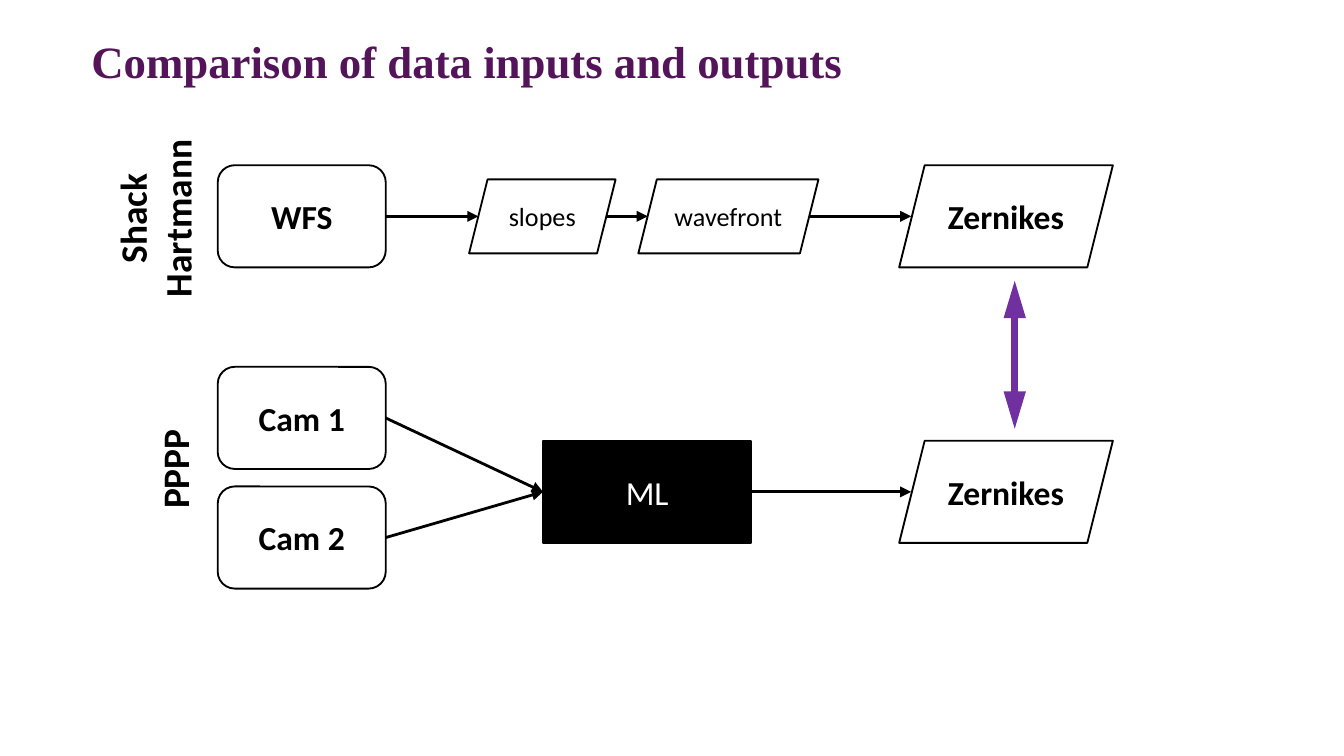
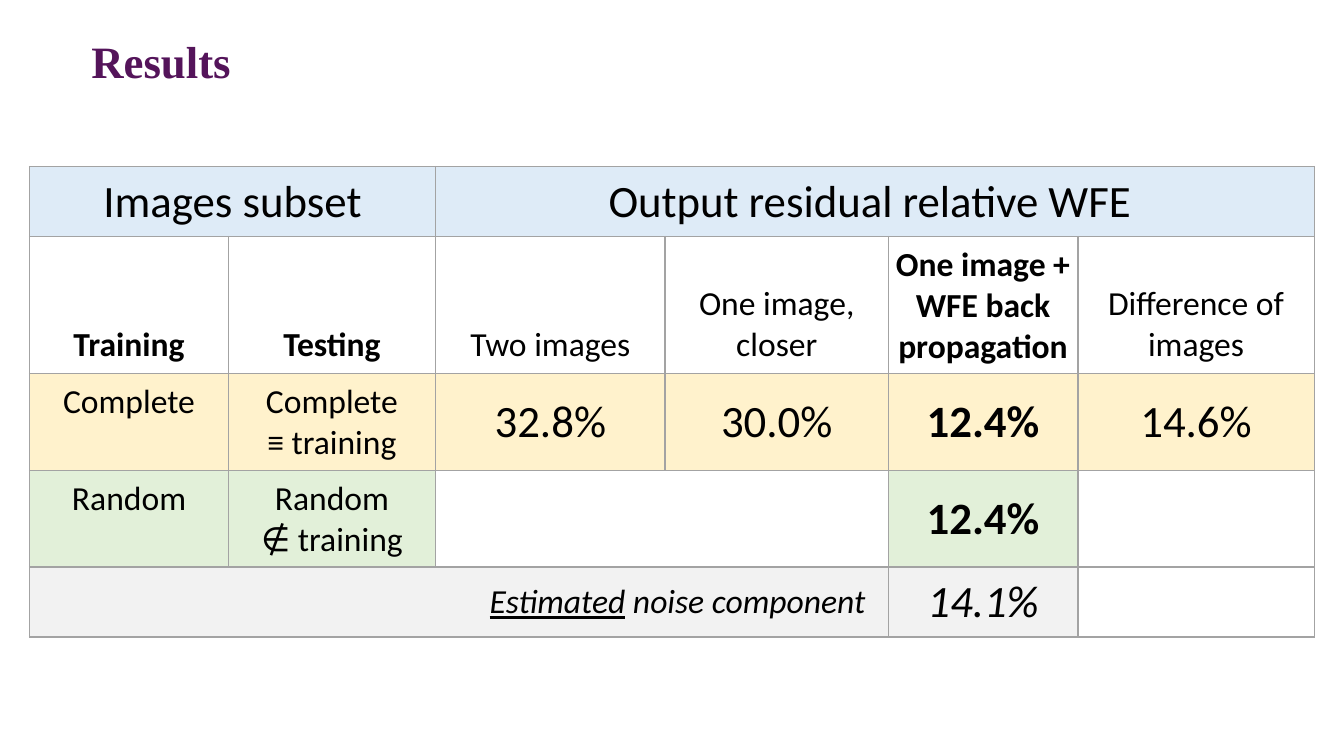
from lxml import etree
from pptx import Presentation
from pptx.dml.color import RGBColor
from pptx.enum.shapes import MSO_CONNECTOR, MSO_SHAPE
from pptx.enum.text import MSO_ANCHOR, PP_ALIGN
from pptx.oxml import parse_xml
from pptx.oxml.ns import nsdecls, qn
from pptx.util import Inches, Pt

BLACK = RGBColor(0x00, 0x00, 0x00)
WHITE = RGBColor(0xFF, 0xFF, 0xFF)
PLUM = RGBColor(0x54, 0x14, 0x5A)
PURPLE = RGBColor(0x70, 0x30, 0xA0)
BORDER = RGBColor(0xA3, 0xA3, 0xA3)
BLUE = RGBColor(0xDE, 0xEB, 0xF7)
YELLOW = RGBColor(0xFF, 0xF2, 0xCC)
GREEN = RGBColor(0xE2, 0xF0, 0xD9)
GREY = RGBColor(0xF2, 0xF2, 0xF2)


def write(tf, text, size, bold=False, color=BLACK, align=PP_ALIGN.CENTER, name="Calibri"):
    """Fill a text frame, one paragraph per item of text."""
    for i, line in enumerate(text):
        p = tf.add_paragraph() if i else tf.paragraphs[0]
        p.text = line
        p.alignment = align
        p.font.name, p.font.size, p.font.bold = name, Pt(size), bold
        p.font.color.rgb = color


def arrow(s, x1, y1, x2, y2, color=BLACK, width=1.5, ends=("tailEnd",), length="med"):
    c = s.shapes.add_connector(MSO_CONNECTOR.STRAIGHT, *map(Inches, (x1, y1, x2, y2)))
    c.line.color.rgb, c.line.width = color, Pt(width)
    for end in ends:
        etree.SubElement(c.line._get_or_add_ln(), qn("a:" + end), type="triangle", len=length)
    etree.SubElement(c._element.spPr, qn("a:effectLst"))


# Widescreen, 16:9
prs = Presentation()
prs.slide_width = Inches(10)
prs.slide_height = prs.slide_width * 9 // 16

# Slides with the shared title style
slides = []
for title in ("Comparison of data inputs and outputs", "Results"):
    s = prs.slides.add_slide(prs.slide_layouts[6])
    tf = s.shapes.add_textbox(Inches(0.68), Inches(0.3), Inches(8.64), Inches(0.94)).text_frame
    tf.word_wrap = True
    tf.margin_left = tf.margin_right = tf.margin_top = tf.margin_bottom = 0
    write(tf, [title], 24, True, PLUM, PP_ALIGN.LEFT, "Times New Roman")
    tf.paragraphs[0].line_spacing = 0.9
    slides.append(s)
flow, results = slides

# Flow chart grid: column edges and row centres
SENSOR_X, SENSOR_W = 1.62, 1.25
SENSOR_END = SENSOR_X + SENSOR_W
ML_X, ML_W = 4.04, 1.55
OUT_X, OUT_W, OUT_IN = 6.69, 1.59, 6.78
BOX_H, STEP_H = 0.76, 0.55
SH_Y, CAM1_Y, ML_Y, CAM2_Y = 1.61, 3.11, 3.66, 4.0

# Boxes, each centred on its row
ROUND, SLANT = MSO_SHAPE.ROUNDED_RECTANGLE, MSO_SHAPE.PARALLELOGRAM
for text, kind, x, y, w, h, size, bold, fill, color in (
    ("WFS", ROUND, SENSOR_X, SH_Y, SENSOR_W, BOX_H, 18, True, WHITE, BLACK),
    ("slopes", SLANT, 3.49, SH_Y, 1.09, STEP_H, 14, False, WHITE, BLACK),
    ("wavefront", SLANT, 4.75, SH_Y, 1.34, STEP_H, 14, False, WHITE, BLACK),
    ("Zernikes", SLANT, OUT_X, SH_Y, OUT_W, BOX_H, 18, True, WHITE, BLACK),
    ("Cam 1", ROUND, SENSOR_X, CAM1_Y, SENSOR_W, BOX_H, 18, True, WHITE, BLACK),
    ("Cam 2", ROUND, SENSOR_X, CAM2_Y, SENSOR_W, BOX_H, 18, True, WHITE, BLACK),
    ("ML", MSO_SHAPE.FLOWCHART_PROCESS, ML_X, ML_Y, ML_W, BOX_H, 18, False, BLACK, WHITE),
    ("Zernikes", SLANT, OUT_X, ML_Y, OUT_W, BOX_H, 18, True, WHITE, BLACK),
):
    sp = flow.shapes.add_shape(kind, Inches(x), Inches(y - h / 2), Inches(w), Inches(h))
    sp.shadow.inherit = False
    sp.fill.solid()
    sp.fill.fore_color.rgb = fill
    sp.line.color.rgb, sp.line.width = BLACK, Pt(1)
    sp.text_frame.vertical_anchor = MSO_ANCHOR.MIDDLE
    write(sp.text_frame, [text], size, bold, color)

# Arrows
for x1, x2 in ((SENSOR_END, 3.56), (4.52, 4.82), (6.02, OUT_IN)):
    arrow(flow, x1, SH_Y, x2, SH_Y)
for cam_y in (CAM1_Y, CAM2_Y):
    arrow(flow, SENSOR_END, cam_y, ML_X, ML_Y)
arrow(flow, ML_X + ML_W, ML_Y, OUT_IN, ML_Y)
arrow(flow, 7.55, 2.09, 7.55, 3.19, PURPLE, 4, ("headEnd", "tailEnd"), "lg")

# Rotated row labels
for lines, x, y, w, h in ((["Shack", "Hartmann"], 0.46, 1.24, 1.38, 0.77),
                          (["PPPP"], 0.9, 3.27, 0.8, 0.44)):
    sp = flow.shapes.add_textbox(Inches(x), Inches(y), Inches(w), Inches(h))
    sp.rotation = 270
    sp.text_frame.word_wrap = False
    write(sp.text_frame, lines, 20, True)

# Results table: (text, size, bold, anchor, fill) per cell
TOP, MID, LOW = MSO_ANCHOR.TOP, MSO_ANCHOR.MIDDLE, MSO_ANCHOR.BOTTOM
EMPTY = ("", 18, False, TOP, None)
rows = (
    [("Images subset", 24, False, TOP, BLUE), ("", 24, False, TOP, BLUE),
     ("Output residual relative WFE ", 24, False, TOP, BLUE)]
    + [("", 24, False, TOP, BLUE)] * 3,
    [(text, 18, bold, LOW, None) for text, bold in (
        ("Training", True), ("Testing", True), ("Two images", False),
        ("One image,\vcloser", False), ("One image + WFE back propagation", True),
        ("Difference of images", False))],
    [(text, 18, False, TOP, YELLOW) for text in ("Complete", "Complete\v≡ training")]
    + [(text, 24, text == "12.4%", MID, YELLOW)
       for text in ("32.8%", "30.0%", "12.4%", "14.6%")],
    [(text, 18, False, TOP, GREEN) for text in ("Random", "Random\v∉ training")]
    + [EMPTY, EMPTY, ("12.4%", 24, True, MID, GREEN), EMPTY],
    [("", 18, False, MID, GREY)] * 4 + [("14.1%", 24, False, TOP, GREY), EMPTY],
)
widths = (1.48, 1.54, 1.71, 1.66, 1.41, 1.76)
heights = (0.52, 1.02, 0.72, 0.72, 0.52)
table = results.shapes.add_table(len(rows), len(widths), Inches(0.22), Inches(1.24),
                                 Inches(sum(widths)), Inches(sum(heights))).table
table.first_row = table.horz_banding = False
for col, w in zip(table.columns, widths):
    col.width = Inches(w)
for row, h in zip(table.rows, heights):
    row.height = Inches(h)

for r, row in enumerate(rows):
    for c, (text, size, bold, anchor, fill) in enumerate(row):
        cell = table.cell(r, c)
        cell.margin_left = cell.margin_right = Inches(0.05)
        cell.margin_top = cell.margin_bottom = Inches(0.06)
        cell.vertical_anchor = anchor
        write(cell.text_frame, [text], size, bold)
        if fill is None:
            cell.fill.background()
        else:
            cell.fill.solid()
            cell.fill.fore_color.rgb = fill
        for i, side in enumerate(("lnL", "lnR", "lnT", "lnB")):
            cell._tc.get_or_add_tcPr().insert(i, parse_xml(
                f'<a:{side} {nsdecls("a")} w="{Pt(1)}"><a:solidFill>'
                f'<a:srgbClr val="{BORDER}"/></a:solidFill></a:{side}>'))

# Merged cells
for r, first, last in ((0, 0, 1), (0, 2, 5), (3, 2, 3), (4, 0, 3)):
    table.cell(r, first).merge(table.cell(r, last))

# Noise row in italics, with its label set in from the right
noise = table.cell(4, 0)
noise.margin_right = Inches(0.17)
p = noise.text_frame.paragraphs[0]
p.alignment = PP_ALIGN.RIGHT
for text, underline in (("Estimated", True), (" noise component", False)):
    run = p.add_run()
    run.text, run.font.underline = text, underline
for cell in (noise, table.cell(4, 4)):
    cell.text_frame.paragraphs[0].font.italic = True

prs.save("out.pptx")
